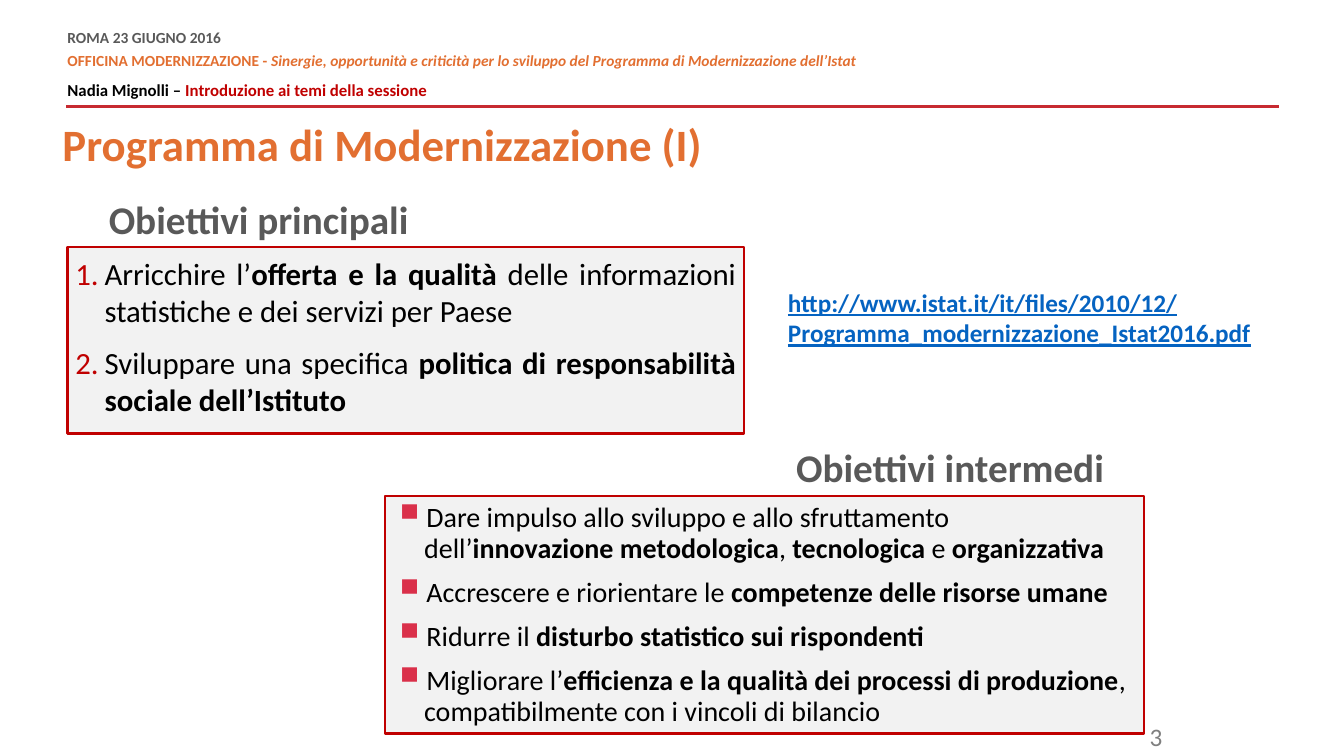
import pptx
import pptx.util
import pptx.dml.color
import pptx.enum.shapes
import pptx.enum.text
import pptx.oxml
import pptx.oxml.ns
from lxml import etree

Pt = pptx.util.Pt
Align = pptx.enum.text.PP_ALIGN
Anchor = pptx.enum.text.MSO_ANCHOR


class Theme:
    font = "Calibri"
    orange, red, rule_red, bullet_red = "E26F31", "C00000", "C72A31", "DA304A"
    black, gray, page_gray, panel, link = "000000", "595959", "7F7F7F", "F2F2F2", "0563C1"
    title, heading, goal, step, body, author, event = 32, 28, 22, 20, 18, 12, 11


def color(value):
    return pptx.dml.color.RGBColor.from_string(value)


def add_runs(paragraph, size, runs):
    """Append runs given as (text, colour, bold)."""
    for text, text_color, bold in runs:
        run = paragraph.add_run()
        run.text = text
        run.font.name = Theme.font
        run.font.size = Pt(size)
        run.font.bold = bold
        run.font.color.rgb = color(text_color)


presentation = pptx.Presentation()
presentation.slide_width, presentation.slide_height = Pt(960), Pt(540)
slide = presentation.slides.add_slide(presentation.slide_layouts[5])

# Header rule
rule = slide.shapes.add_connector(
    pptx.enum.shapes.MSO_CONNECTOR.STRAIGHT, Pt(47.5), Pt(76.3), Pt(913.7), Pt(76.3))
rule.line.color.rgb = color(Theme.rule_red)
rule.line.width = Pt(2)
etree.SubElement(rule._element.spPr, pptx.oxml.ns.qn("a:effectLst"))

# Header: date, event, speaker
header_lines = [
    (Theme.event, 0, [("ROMA 23 GIUGNO 2016", Theme.gray, True)]),
    (Theme.event, 6, [
        ("OFFICINA MODERNIZZAZIONE - ", Theme.orange, True),
        ("Sinergie, opportunità e criticità per lo sviluppo del Programma di "
         "Modernizzazione dell’Istat", Theme.orange, True)]),
    (Theme.author, 10.8, [
        ("Nadia Mignolli – ", Theme.black, True),
        ("Introduzione ai temi della sessione", Theme.red, True)]),
]
header = slide.shapes.add_textbox(Pt(48.2), Pt(22.3), Pt(721.4), Pt(50.4)).text_frame
header.word_wrap = True
header.margin_left = header.margin_top = header.margin_right = header.margin_bottom = 0
for index, (size, space_before, runs) in enumerate(header_lines):
    paragraph = header.add_paragraph() if index else header.paragraphs[0]
    paragraph.line_spacing = Pt(10.8)
    paragraph.space_before = Pt(space_before)
    add_runs(paragraph, size, runs)
header.paragraphs[1].runs[1].font.italic = True

# Title
title = slide.shapes.title
title.left, title.top, title.width, title.height = Pt(44.6), Pt(87.8), Pt(756), Pt(33.8)
frame = title.text_frame
frame.margin_left = frame.margin_top = frame.margin_right = frame.margin_bottom = 0
frame.auto_size = pptx.enum.text.MSO_AUTO_SIZE.NONE
frame.vertical_anchor = Anchor.MIDDLE
frame.paragraphs[0].alignment = Align.LEFT
frame.paragraphs[0].line_spacing = 0.9
add_runs(frame.paragraphs[0], Theme.title,
         [("Programma di Modernizzazione (I)", Theme.orange, True)])

# Panels: within each item, every second part is bold
number_bullet = [f'<a:buClr {{}}><a:srgbClr val="{Theme.red}"/></a:buClr>',
                 '<a:buAutoNum {} type="arabicPeriod"/>']
square_bullet = [f'<a:buClr {{}}><a:srgbClr val="{Theme.bullet_red}"/></a:buClr>',
                 '<a:buSzPct {} val="160000"/>', '<a:buChar {} char="▪"/>']
goals = [
    ["Arricchire l’", "offerta e la qualità ",
     "delle informazioni statistiche e dei servizi per Paese"],
    ["Sviluppare una specifica ", "politica di responsabilità sociale dell’Istituto"],
]
steps = [
    ["Dare impulso allo sviluppo e allo sfruttamento dell’", "innovazione metodologica",
     ", ", "tecnologica", " e ", "organizzativa"],
    ["Accrescere e riorientare le ", "competenze delle risorse umane"],
    ["Ridurre il ", "disturbo statistico sui rispondenti"],
    ["Migliorare l’", "efficienza e la qualità dei processi di produzione",
     ", compatibilmente con i vincoli di bilancio"],
]
panels = [
    ((48.2, 176.4, 483.1, 133.2), goals, Theme.goal, number_bullet, 20.9, Align.JUSTIFY, 1, 11),
    ((275, 354.2, 542.2, 169.9), steps, Theme.step, square_bullet, 22.3, Align.LEFT, 0.9, 10),
]
for box, items, size, bullet, indent, alignment, line_spacing, gap in panels:
    panel = slide.shapes.add_shape(
        pptx.enum.shapes.MSO_SHAPE.RECTANGLE, *[Pt(length) for length in box])
    panel.shadow.inherit = False
    panel.fill.solid()
    panel.fill.fore_color.rgb = color(Theme.panel)
    panel.line.color.rgb = color(Theme.red)
    panel.line.width = Pt(1.75)
    frame = panel.text_frame
    frame.margin_left = frame.margin_top = frame.margin_right = frame.margin_bottom = Pt(5.67)
    frame.vertical_anchor = Anchor.TOP
    for index, parts in enumerate(items):
        paragraph = frame.add_paragraph() if index else frame.paragraphs[0]
        properties = paragraph._p.get_or_add_pPr()
        properties.set("marL", str(Pt(indent)))
        properties.set("indent", str(-Pt(indent)))
        for element in bullet:
            properties.append(pptx.oxml.parse_xml(
                element.format(pptx.oxml.ns.nsdecls("a"))))
        paragraph.alignment = alignment
        paragraph.line_spacing = line_spacing
        paragraph.space_before = Pt(gap if index else 0)
        add_runs(paragraph, size, [(text, Theme.black, position % 2 == 1)
                                   for position, text in enumerate(parts)])

# Panel headings, document link and page number
labels = [
    ((70.6, 136.1, 252.7, 41), "Obiettivi principali", Theme.heading, Theme.gray, True, Align.LEFT),
    ((561.6, 313.2, 252.7, 41), "Obiettivi intermedi", Theme.heading, Theme.gray, True, Align.LEFT),
    ((555.8, 201.6, 401, 51.1),
     "http://www.istat.it/it/files/2010/12/Programma_modernizzazione_Istat2016.pdf",
     Theme.body, Theme.link, True, Align.JUSTIFY),
    ((621.4, 511.9, 216, 28.8), "3", Theme.body, Theme.page_gray, False, Align.RIGHT),
]
for box, text, size, text_color, bold, alignment in labels:
    frame = slide.shapes.add_textbox(*[Pt(length) for length in box]).text_frame
    frame.word_wrap = True
    paragraph = frame.paragraphs[0]
    paragraph.alignment = alignment
    add_runs(paragraph, size, [(text, text_color, bold)])
    paragraph.runs[0].font.underline = text_color == Theme.link

presentation.save("out.pptx")
